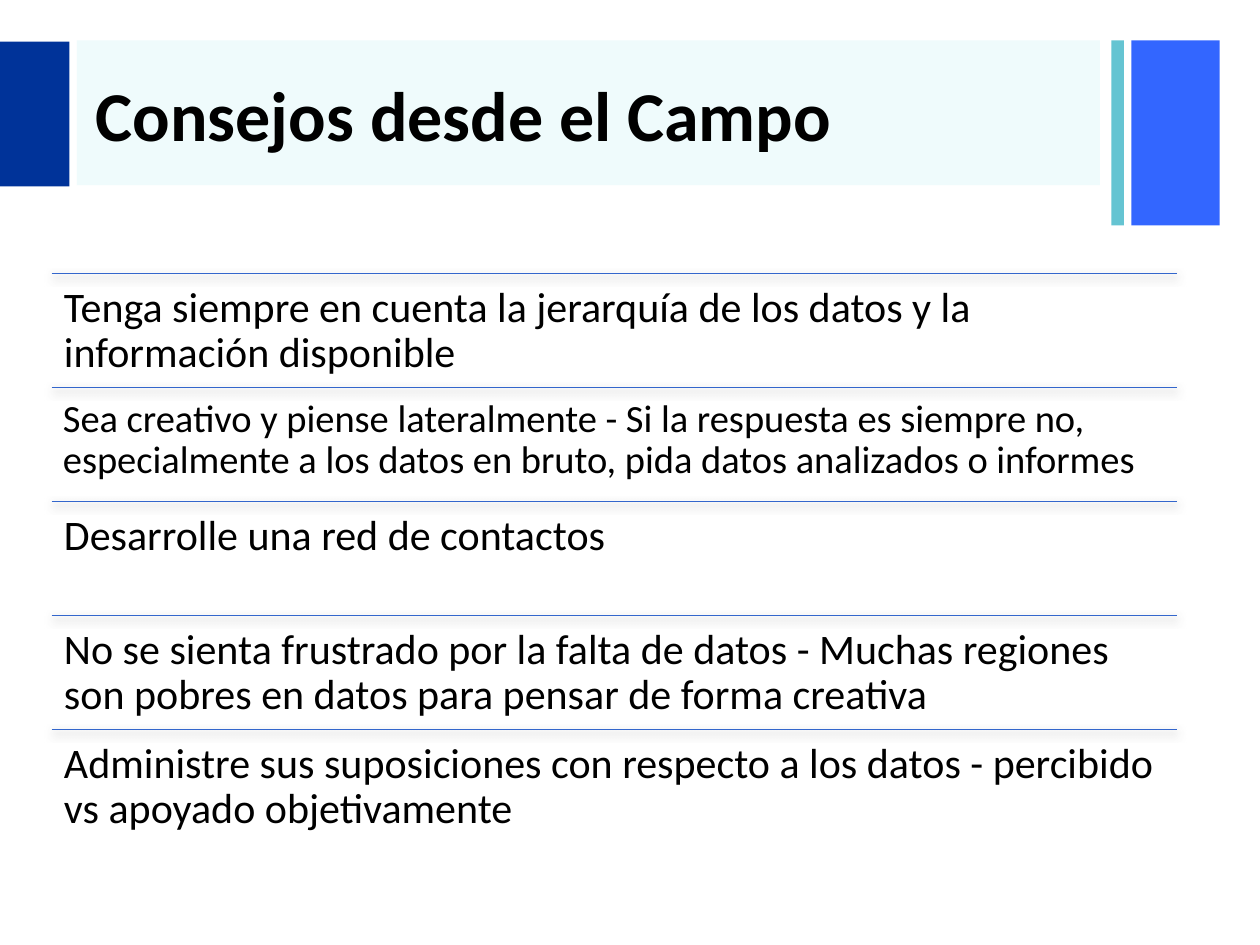
from lxml.etree import SubElement
from pptx import Presentation
from pptx.dml.color import RGBColor
from pptx.enum.shapes import MSO_CONNECTOR as Connector, MSO_SHAPE as Shape
from pptx.enum.text import MSO_ANCHOR as Anchor, MSO_AUTO_SIZE as AutoSize, PP_ALIGN as Align
from pptx.oxml.ns import qn
from pptx.util import Inches, Pt

COLORS = {
    "navy": "003399",
    "blue": "3366FF",
    "teal": "65C4D2",
    "band": "EFFBFC",
    "rule": "3366CC",
    "shadow": "808080",
    "text": "000000",
}
FONT = "Calibri"
COLUMNS, ROWS = 100, 75
BLOCKS = [
    ("blue", 89.8, 3.2, 7, 14.7),
    ("teal", 88.2, 3.2, 1, 14.7),
    ("band", 6.1, 3.2, 81.2, 11.5),
    ("navy", 0, 3.3, 5.5, 11.5),
]
TIPS = [
    ("Tenga siempre en cuenta la jerarquía de los datos y la información disponible", 24),
    ("Sea creativo y piense lateralmente - Si la respuesta es siempre no, "
     "especialmente a los datos en bruto, pida datos analizados o informes", 22),
    ("Desarrolle una red de contactos", 24),
    ("No se sienta frustrado por la falta de datos - Muchas regiones son pobres "
     "en datos para pensar de forma creativa", 24),
    ("Administre sus suposiciones con respecto a los datos - percibido vs apoyado "
     "objetivamente", 24),
]
LIST_LEFT, LIST_TOP, LIST_WIDTH, TIP_HEIGHT = 4.1, 21.7, 89.3, 9.05


class SlideBuilder:
    """Hold the style and the current slide, placing elements on a grid of columns and rows."""

    def __init__(self, presentation):
        self.column = presentation.slide_width / COLUMNS
        self.row = presentation.slide_height / ROWS
        self.slide = presentation.slides.add_slide(presentation.slide_layouts[5])

    def place(self, left, top, width, height):
        return (round(left * self.column), round(top * self.row),
                round(width * self.column), round(height * self.row))

    def color(self, name):
        return RGBColor.from_string(COLORS[name])

    def set_text(self, shape, text, size, bold=False, inset=0.1):
        frame = shape.text_frame
        frame.text = text
        frame.word_wrap = True
        frame.auto_size = AutoSize.NONE
        frame.margin_left = frame.margin_right = Inches(inset)
        frame.margin_top = frame.margin_bottom = Inches(inset)
        paragraph = frame.paragraphs[0]
        paragraph.alignment = Align.LEFT
        font = paragraph.runs[0].font
        font.name, font.size, font.bold = FONT, Pt(size), bold
        font.color.rgb = self.color("text")
        return frame

    def block(self, color, *area):
        shape = self.slide.shapes.add_shape(Shape.RECTANGLE, *self.place(*area))
        shape.shadow.inherit = False
        shape.fill.solid()
        shape.fill.fore_color.rgb = self.color(color)
        shape.line.fill.background()

    def title(self, text, *area):
        title = self.slide.shapes.title
        title.left, title.top, title.width, title.height = self.place(*area)
        frame = self.set_text(title, text, 40, bold=True)
        frame.margin_left = Inches(0.22)
        frame.vertical_anchor = Anchor.MIDDLE
        self.slide.shapes._spTree.append(title._element)

    def rule(self, left, top, width):
        x, y, length, _ = self.place(left, top, width, 0)
        line = self.slide.shapes.add_connector(Connector.STRAIGHT, x, y, x + length, y)
        line.line.color.rgb = self.color("rule")
        line.line.width = Pt(1)
        effects = SubElement(line._element.spPr, qn("a:effectLst"))
        shadow = SubElement(effects, qn("a:outerShdw"), blurRad=str(Pt(5)),
                            dist=str(Pt(2)), dir="5400000", rotWithShape="0")
        tint = SubElement(shadow, qn("a:srgbClr"), val=COLORS["shadow"])
        SubElement(tint, qn("a:alpha"), val="75000")

    def tip(self, text, size, *area):
        box = self.slide.shapes.add_textbox(*self.place(*area))
        frame = self.set_text(box, text, size, inset=0.1 if size == 24 else 0.09)
        frame.vertical_anchor = Anchor.TOP
        frame.paragraphs[0].line_spacing = 0.9


def main():
    presentation = Presentation()
    presentation.slide_width, presentation.slide_height = Inches(10), Inches(7.5)
    builder = SlideBuilder(presentation)
    for block in BLOCKS:
        builder.block(*block)
    builder.title("Consejos desde el Campo", 5.4, 3.4, 82.7, 11.2)
    for index, (text, size) in enumerate(TIPS):
        top = LIST_TOP + index * TIP_HEIGHT
        builder.rule(LIST_LEFT, top, LIST_WIDTH)
        builder.tip(text, size, LIST_LEFT, top, LIST_WIDTH, TIP_HEIGHT)
    presentation.save("out.pptx")


if __name__ == "__main__":
    main()
